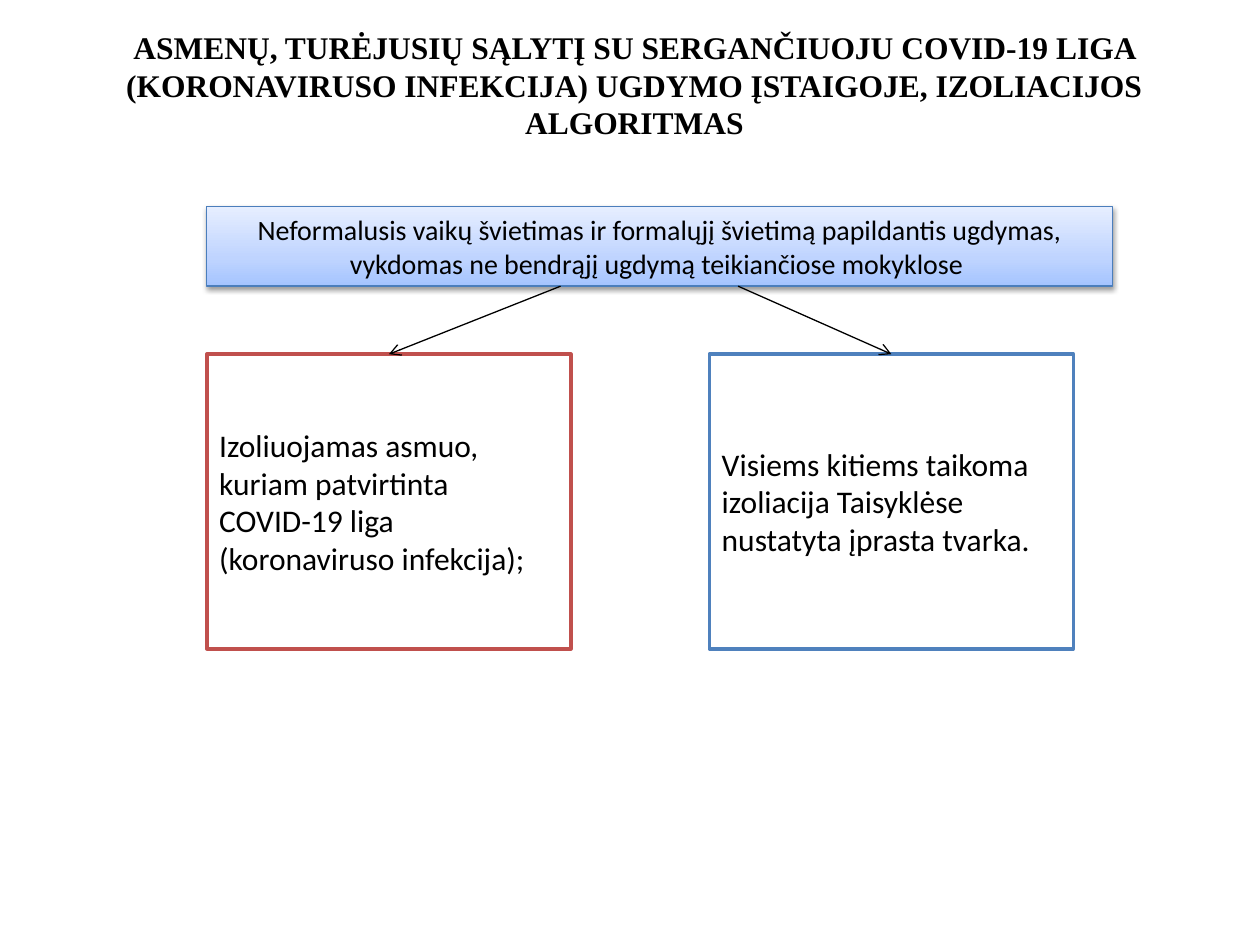
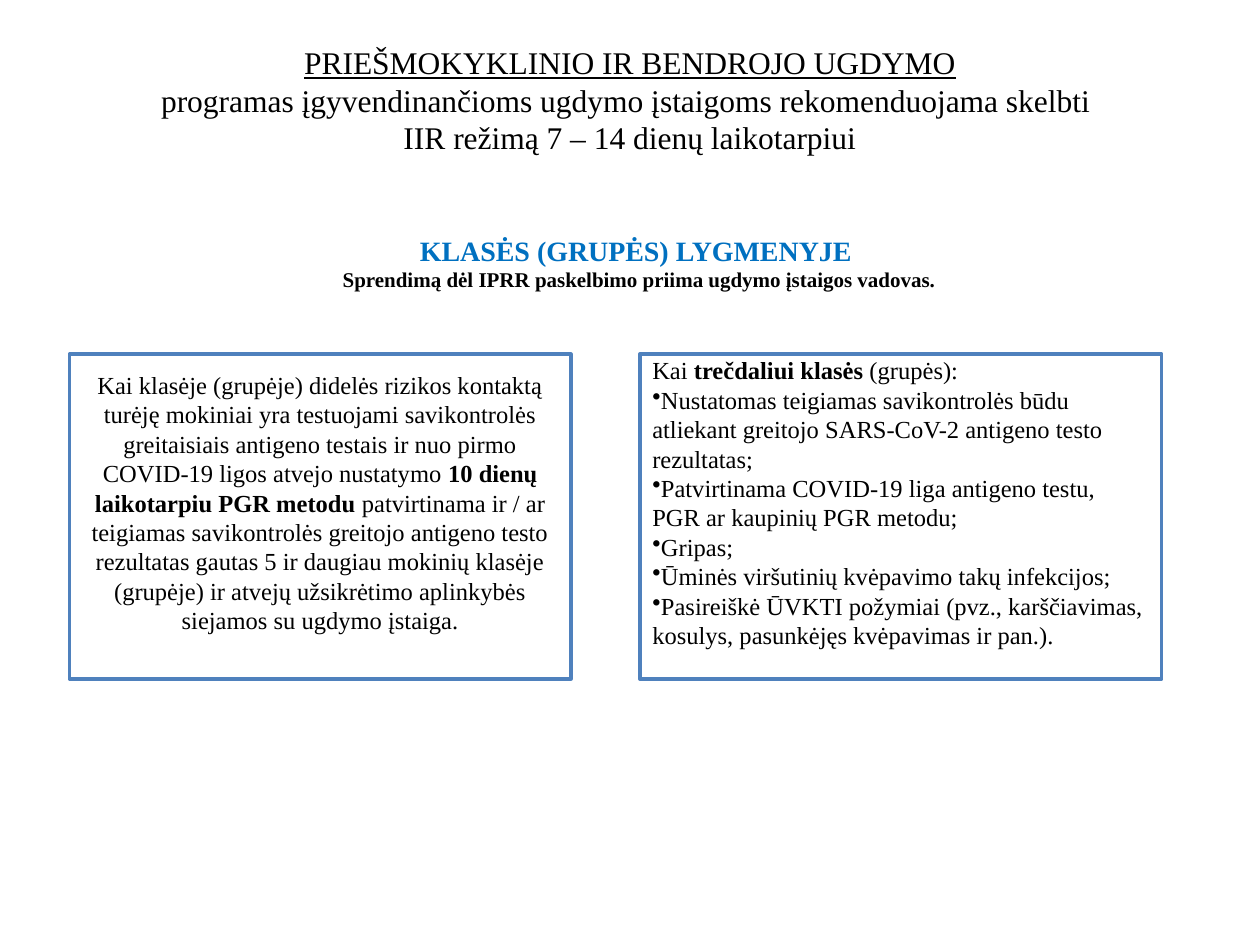
"""Builds two slides on isolation rules in schools."""
from dataclasses import dataclass

from lxml import etree
from pptx import Presentation
from pptx.dml.color import RGBColor
from pptx.enum.shapes import MSO_CONNECTOR, MSO_SHAPE
from pptx.enum.text import MSO_ANCHOR, MSO_AUTO_SIZE, PP_ALIGN
from pptx.oxml.ns import qn
from pptx.shapes.autoshape import Shape
from pptx.slide import Slide
from pptx.text.text import TextFrame
from pptx.util import Cm, Pt

RECTANGLE = MSO_SHAPE.RECTANGLE
STRAIGHT = MSO_CONNECTOR.STRAIGHT
MIDDLE = MSO_ANCHOR.MIDDLE
NO_AUTOFIT = MSO_AUTO_SIZE.NONE
LEFT, CENTER = PP_ALIGN.LEFT, PP_ALIGN.CENTER
TITLE_ONLY = 5

BLACK = RGBColor(0x00, 0x00, 0x00)
WHITE = RGBColor(0xFF, 0xFF, 0xFF)
BLUE = RGBColor(0x4F, 0x81, 0xBD)
RED = RGBColor(0xC0, 0x50, 0x4D)
HEADING_BLUE = RGBColor(0x00, 0x70, 0xC0)
BANNER_EDGE = RGBColor(0x4B, 0x7E, 0xBC)
BANNER_STOPS = (
    (0, RGBColor(0xA4, 0xC4, 0xFF)),
    (35, RGBColor(0xBF, 0xD4, 0xFF)),
    (100, RGBColor(0xE6, 0xEE, 0xFF)),
)
SANS, SERIF = "Calibri", "Times New Roman"
ROW_TOP = 7.14


@dataclass(frozen=True)
class Area:
    """A rectangle on the slide, in centimetres."""
    left: float
    top: float
    width: float
    height: float

    @property
    def middle(self) -> float:
        """Return the horizontal middle."""
        return self.left + self.width / 2

    @property
    def bottom(self) -> float:
        """Return the lower edge."""
        return self.top + self.height


@dataclass(frozen=True)
class Span:
    """A stretch of text in one format."""
    text: str
    bold: bool = False
    underline: bool = False
    new_line: bool = False


@dataclass(frozen=True)
class Para:
    """A paragraph with its shared format."""
    spans: tuple[Span, ...]
    size: int
    font: str = SERIF
    color: RGBColor = BLACK
    align: PP_ALIGN = CENTER
    bullet: bool = False


@dataclass(frozen=True)
class Panel:
    """An outlined white box with text."""
    area: Area
    edge: RGBColor
    paras: tuple[Para, ...]
    bottom_inset: float = 0.13


def write(frame: TextFrame, paras: tuple[Para, ...]) -> None:
    """Fill a text frame, run by run."""
    frame.word_wrap = True
    frame.auto_size = NO_AUTOFIT
    frame.vertical_anchor = MIDDLE
    for index, para in enumerate(paras):
        paragraph = frame.add_paragraph() if index else frame.paragraphs[0]
        paragraph.alignment = para.align
        if para.bullet:
            etree.SubElement(paragraph._p.get_or_add_pPr(), qn("a:buChar"), char="•")
        for span in para.spans:
            if span.new_line:
                paragraph.add_line_break()
            run = paragraph.add_run()
            run.text = span.text
            run.font.name = para.font
            run.font.size = Pt(para.size)
            run.font.color.rgb = para.color
            run.font.bold = span.bold
            run.font.underline = span.underline


def corners(area: Area) -> tuple[Cm, Cm, Cm, Cm]:
    """Return left, top, width and height as lengths."""
    return Cm(area.left), Cm(area.top), Cm(area.width), Cm(area.height)


def add_titled_slide(deck: Presentation, area: Area, spans: tuple[Span, ...]) -> Slide:
    """Add a slide and set its title."""
    slide = deck.slides.add_slide(deck.slide_layouts[TITLE_ONLY])
    title = slide.shapes.title
    title.left, title.top, title.width, title.height = corners(area)
    write(title.text_frame, (Para(spans, 18),))
    return slide


def add_box(slide: Slide, area: Area, edge: RGBColor, weight: float,
            paras: tuple[Para, ...]) -> Shape:
    """Add an outlined rectangle with text."""
    box = slide.shapes.add_shape(RECTANGLE, *corners(area))
    box.shadow.inherit = False
    box.line.color.rgb = edge
    box.line.width = Pt(weight)
    write(box.text_frame, paras)
    return box


def add_panel(slide: Slide, panel: Panel) -> None:
    """Add a white panel."""
    box = add_box(slide, panel.area, panel.edge, 2, panel.paras)
    box.fill.solid()
    box.fill.fore_color.rgb = WHITE
    box.text_frame.margin_bottom = Cm(panel.bottom_inset)


def add_color(parent: etree._Element, color: RGBColor) -> etree._Element:
    """Append a colour element."""
    return etree.SubElement(parent, qn("a:srgbClr"), val=str(color))


def add_banner(slide: Slide, area: Area, para: Para) -> None:
    """Add the gradient banner with its soft shadow."""
    banner = add_box(slide, area, BANNER_EDGE, 0.75, (para,))
    banner.fill.gradient()
    banner.fill.gradient_angle = 90
    properties = banner._element.spPr
    stops = properties.find(".//" + qn("a:gsLst"))
    for old_stop in list(stops):
        stops.remove(old_stop)
    for percent, color in BANNER_STOPS:
        add_color(etree.SubElement(stops, qn("a:gs"), pos=str(percent * 1000)), color)
    shadow = etree.SubElement(
        properties.find(qn("a:effectLst")), qn("a:outerShdw"),
        blurRad=str(Pt(3.1)), dist=str(Pt(1.6)), dir="5400000", rotWithShape="0")
    etree.SubElement(add_color(shadow, BLACK), qn("a:alpha"), val="38000")


def add_arrow(slide: Slide, start_x: float, source: Area, target: Area) -> None:
    """Add an arrow from a box's lower edge to the top of another."""
    arrow = slide.shapes.add_connector(
        STRAIGHT, Cm(start_x), Cm(source.bottom), Cm(target.middle), Cm(target.top))
    arrow.line.color.rgb = BLACK
    arrow.line.width = Pt(0.75)
    etree.SubElement(arrow.line._get_or_add_ln(), qn("a:tailEnd"), type="arrow")
    etree.SubElement(arrow._element.spPr, qn("a:effectLst"))


def build_isolation_slide(deck: Presentation) -> None:
    """Build the isolation algorithm slide."""
    slide = add_titled_slide(deck, Area(0.79, 0.41, 24, 2.59), (
        Span("ASMENŲ, TURĖJUSIŲ SĄLYTĮ SU SERGANČIUOJU COVID-19 LIGA (KORONAVIRUSO "
             "INFEKCIJA) UGDYMO ĮSTAIGOJE, IZOLIACIJOS ALGORITMAS", bold=True),))
    banner = Area(4.17, 4.17, 18.26, 1.6)
    add_banner(slide, banner, Para((
        Span("Neformalusis vaikų švietimas ir formalųjį švietimą papildantis ugdymas, "
             "vykdomas ne bendrąjį ugdymą teikiančiose mokyklose "),), 16, SANS))
    outcomes = (
        (4.17, 11.3, RED, "Izoliuojamas asmuo, kuriam patvirtinta COVID-19 liga "
                          "(koronaviruso infekcija);"),
        (14.3, 14.88, BLUE, "Visiems kitiems taikoma izoliacija Taisyklėse nustatyta "
                            "įprasta tvarka."),
    )
    for left, arrow_start, edge, text in outcomes:
        area = Area(left, ROW_TOP, 7.34, 5.94)
        add_panel(slide, Panel(area, edge, (Para((Span(text),), 18, SANS, align=LEFT),)))
        add_arrow(slide, arrow_start, banner, area)


def build_class_level_slide(deck: Presentation) -> None:
    """Build the class level recommendations slide."""
    slide = add_titled_slide(deck, Area(1.27, 0.8, 22.86, 2.41), (
        Span("PRIEŠMOKYKLINIO IR BENDROJO UGDYMO", underline=True),
        Span("programas įgyvendinančioms ugdymo įstaigoms rekomenduojama skelbti ",
             new_line=True),
        Span("IIR režimą 7 – 14 dienų laikotarpiui", new_line=True)))
    level = slide.shapes.add_textbox(*corners(Area(1.98, 4.57, 21.82, 1.45)))
    write(level.text_frame, (
        Para((Span("KLASĖS (GRUPĖS) LYGMENYJE ", bold=True),), 16, color=HEADING_BLUE),
        Para((Span("Sprendimą dėl IPRR paskelbimo priima ugdymo įstaigos vadovas.",
                   bold=True),), 12)))
    ten_day_rule = Para((
        Span("Kai klasėje (grupėje) didelės rizikos kontaktą turėję mokiniai yra testuojami "
             "savikontrolės greitaisiais antigeno testais ir nuo pirmo COVID-19 ligos "
             "atvejo nustatymo "),
        Span("10 dienų laikotarpiu PGR metodu ", bold=True),
        Span("patvirtinama ir / ar teigiamas savikontrolės greitojo antigeno testo rezultatas "
             "gautas 5 ir daugiau mokinių klasėje (grupėje) ir atvejų užsikrėtimo aplinkybės "
             "siejamos su ugdymo įstaiga.")), 14)
    third_of_class = Para((Span("Kai "), Span("trečdaliui klasės", bold=True),
                           Span(" (grupės):")), 14, align=LEFT)
    conditions = tuple(
        Para((Span(text),), 14, align=LEFT, bullet=True) for text in (
            "Nustatomas teigiamas savikontrolės būdu atliekant greitojo SARS-CoV-2 "
            "antigeno testo rezultatas;",
            "Patvirtinama COVID-19 liga antigeno testu, PGR ar kaupinių PGR metodu;",
            "Gripas;",
            "Ūminės viršutinių kvėpavimo takų infekcijos;",
            "Pasireiškė ŪVKTI požymiai (pvz., karščiavimas, kosulys, pasunkėjęs kvėpavimas "
            "ir pan.).",
        ))
    for left, width, paras in ((1.4, 10.11, (ten_day_rule,)),
                               (12.9, 10.52, (third_of_class, *conditions))):
        add_panel(slide, Panel(Area(left, ROW_TOP, width, 6.55), BLUE, paras, 0.7))


def main() -> None:
    """Build and save the deck."""
    deck = Presentation()
    deck.slide_width, deck.slide_height = Cm(25.4), Cm(19.05)
    build_isolation_slide(deck)
    build_class_level_slide(deck)
    deck.save("out.pptx")


if __name__ == "__main__":
    main()
